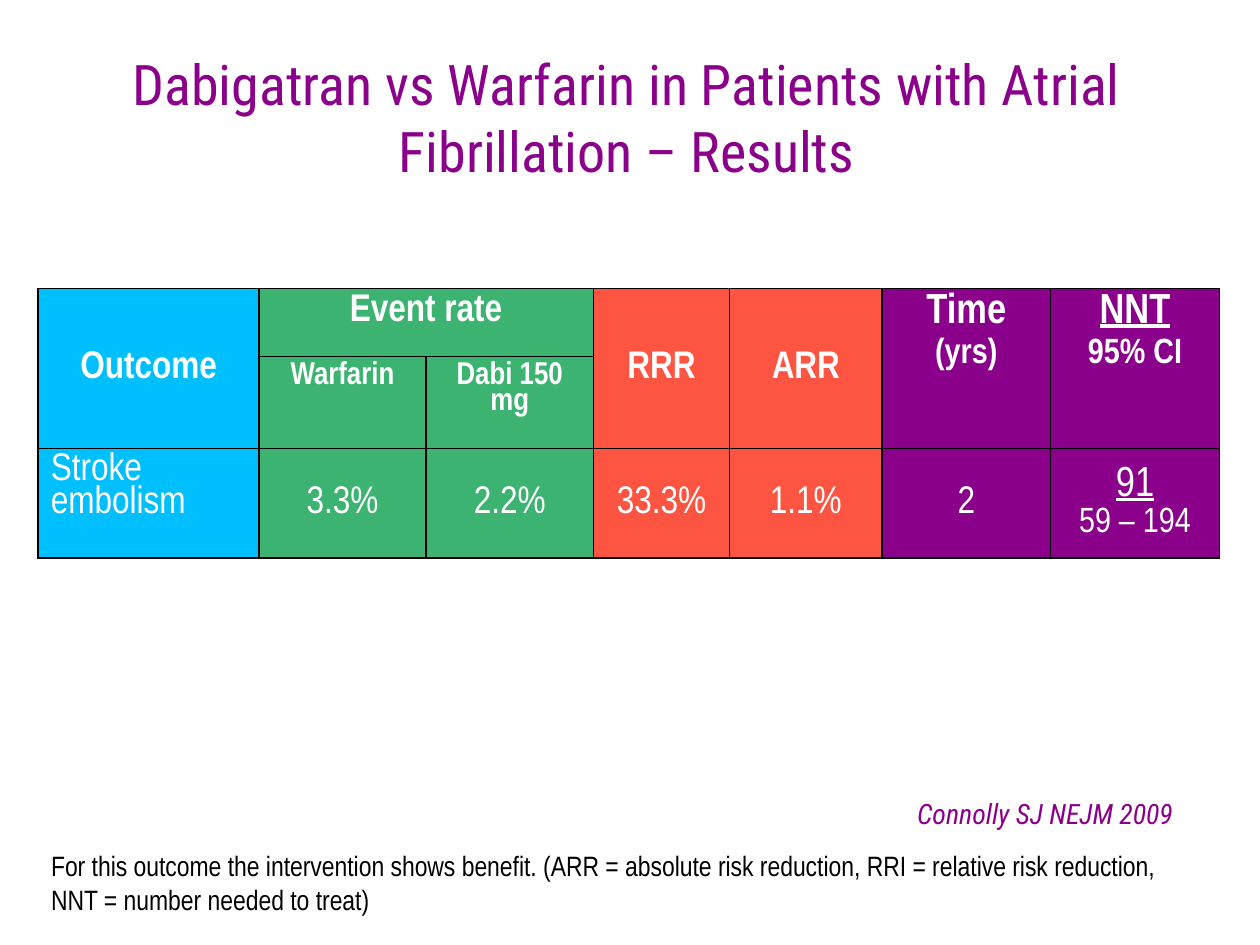
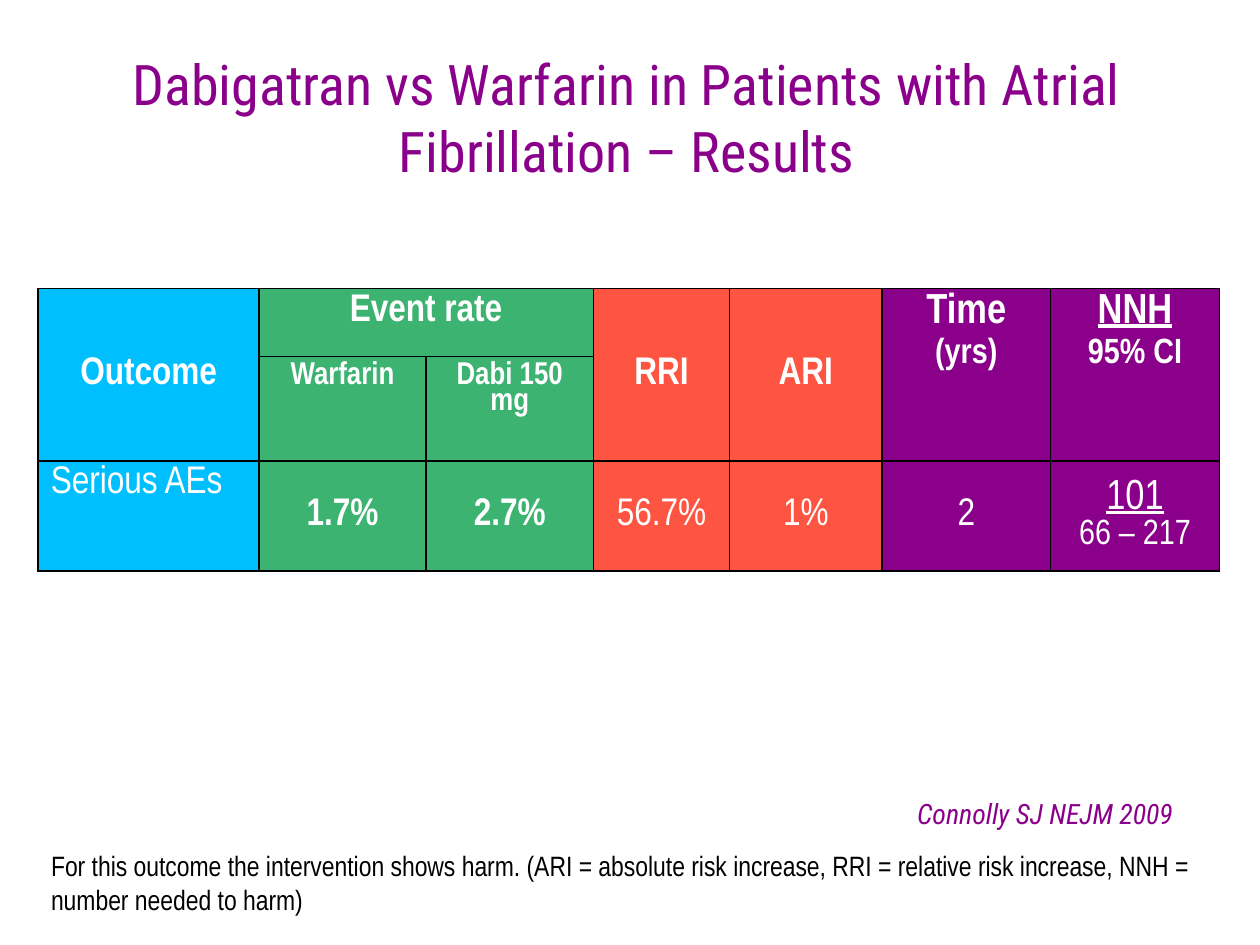
from lxml.etree import SubElement
from pptx import Presentation
from pptx.dml.color import RGBColor
from pptx.enum.text import MSO_ANCHOR as Anchor, MSO_AUTO_SIZE as AutoSize, PP_ALIGN as Align
from pptx.oxml import parse_xml
from pptx.oxml.ns import nsdecls, qn
from pptx.util import Cm, Pt

PURPLE, BLUE, GREEN, RED = "8B008B", "00BFFF", "3CB371", "FE5442"
WHITE, BLACK = "FFFFFF", "000000"
TITLE_FONT, BODY_FONT = "Roboto Condensed", "Arial Narrow"
COLUMN_FILLS = [BLUE, GREEN, GREEN, RED, RED, PURPLE, PURPLE]
COLUMN_WIDTHS = [4.45, 3.37, 3.37, 2.75, 3.07, 3.4, 3.4]
ROW_HEIGHTS = [1.37, 1.85, 2.21]
CELL_SPACING = 0.9
TITLE = "Dabigatran vs Warfarin in Patients with Atrial Fibrillation – Results"
CITATION = "Connolly SJ NEJM 2009"


def color(value):
    return RGBColor.from_string(value)


def write(para, text, size=22, font=BODY_FONT, fill=WHITE, bold=False, italic=False,
          underline=False, align=Align.CENTER, spacing=None, before=None, after=None):
    para.alignment = align
    para.line_spacing = spacing
    if before:
        para.space_before = Pt(before)
    if after:
        para.space_after = Pt(after)
    span = para.add_run()
    span.text = text
    span.font.name, span.font.size = font, Pt(size)
    span.font.bold, span.font.italic, span.font.underline = bold, italic, underline
    span.font.color.rgb = color(fill)


def add_borders(cell):
    properties = cell._tc.get_or_add_tcPr()
    for index, side in enumerate(["lnL", "lnR", "lnT", "lnB"]):
        line = parse_xml(f'<a:{side} {nsdecls("a")} w="{Pt(1)}"/>')
        fill = SubElement(line, qn("a:solidFill"))
        SubElement(fill, qn("a:srgbClr"), val=BLACK)
        properties.insert(index, line)


class ResultDeck:
    def __init__(self):
        self.deck = Presentation()
        self.deck.slide_width, self.deck.slide_height = Cm(25.4), Cm(19.05)
        self.page = None

    def add_page(self):
        self.page = self.deck.slides.add_slide(self.deck.slide_layouts[6])

    def add_text(self, text, left, top, width, height, anchor=Anchor.TOP, grow=False, **style):
        box = self.page.shapes.add_textbox(Cm(left), Cm(top), Cm(width), Cm(height))
        frame = box.text_frame
        frame.word_wrap = True
        frame.vertical_anchor = anchor
        frame.auto_size = AutoSize.SHAPE_TO_FIT_TEXT if grow else AutoSize.NONE
        write(frame.paragraphs[0], text, **style)

    def add_grid(self, left, top):
        frame = self.page.shapes.add_table(
            len(ROW_HEIGHTS), len(COLUMN_WIDTHS), Cm(left), Cm(top),
            Cm(sum(COLUMN_WIDTHS)), Cm(sum(ROW_HEIGHTS)))
        grid = frame.table
        grid.first_row = grid.horz_banding = False
        for column, width in zip(grid.columns, COLUMN_WIDTHS):
            column.width = Cm(width)
        for row, height in zip(grid.rows, ROW_HEIGHTS):
            row.height = Cm(height)
            for cell, fill in zip(row.cells, COLUMN_FILLS):
                cell.fill.solid()
                cell.fill.fore_color.rgb = color(fill)
                add_borders(cell)
        grid.cell(0, 1).merge(grid.cell(0, 2))
        for column in (0, 3, 4, 5, 6):
            grid.cell(0, column).merge(grid.cell(1, column))
        return grid

    def fill_cell(self, cell, text, anchor=Anchor.MIDDLE, **style):
        cell.vertical_anchor = anchor
        write(cell.text_frame.paragraphs[0], text, spacing=CELL_SPACING, **style)

    def fill_pair(self, cell, upper, lower, anchor, underline=True, bold=False, before=None, after=None):
        self.fill_cell(cell, upper, anchor, size=24, bold=bold, underline=underline, after=after)
        write(cell.text_frame.add_paragraph(), lower, size=20, bold=bold, spacing=CELL_SPACING,
              before=before, after=after)

    def add_results(self, relative, absolute, number, outcome, rates, changes, estimate, interval,
                    bold_rates):
        grid = self.add_grid(0.77, 5.82)
        for column, text in ((0, "Outcome"), (3, relative), (4, absolute)):
            self.fill_cell(grid.cell(0, column), text, bold=True)
        self.fill_cell(grid.cell(0, 1), "Event rate", Anchor.TOP, bold=True)
        for column, text in enumerate(["Warfarin", "Dabi 150 mg"], 1):
            self.fill_cell(grid.cell(1, column), text, Anchor.TOP, size=18, bold=True)
        self.fill_pair(grid.cell(0, 5), "Time", "(yrs)", Anchor.TOP, underline=False, bold=True, before=5)
        self.fill_pair(grid.cell(0, 6), number, "95% CI", Anchor.TOP, bold=True, before=5)
        self.fill_cell(grid.cell(2, 0), outcome, Anchor.TOP, align=Align.LEFT)
        for column, text in enumerate([*rates, *changes, "2"], 1):
            self.fill_cell(grid.cell(2, column), text, bold=bold_rates and column <= len(rates))
        self.fill_pair(grid.cell(2, 6), estimate, interval, Anchor.MIDDLE, after=2.5)

    def add_result_page(self, note, **results):
        self.add_page()
        self.add_text(TITLE, 0.78, 0.76, 23.72, 3.18, Anchor.MIDDLE,
                      size=32, font=TITLE_FONT, fill=PURPLE)
        self.add_results(**results)
        self.add_text(note, 0.78, 16.99, 23.72, 0.94, grow=True,
                      size=16, fill=BLACK, align=Align.LEFT)
        self.add_text(CITATION, 8.71, 15.93, 15.19, 0.94, grow=True,
                      size=16, font=TITLE_FONT, fill=PURPLE, italic=True, align=Align.RIGHT)


def main():
    results = ResultDeck()
    results.add_result_page(
        "For this outcome the intervention shows benefit. (ARR = absolute risk reduction, "
        "RRI = relative risk reduction, NNT = number needed to treat)",
        relative="RRR", absolute="ARR", number="NNT", outcome="Stroke embolism",
        rates=["3.3%", "2.2%"], changes=["33.3%", "1.1%"],
        estimate="91", interval="59 – 194", bold_rates=False)
    results.add_result_page(
        "For this outcome the intervention shows harm. (ARI = absolute risk increase, "
        "RRI = relative risk increase, NNH = number needed to harm)",
        relative="RRI", absolute="ARI", number="NNH", outcome="Serious AEs",
        rates=["1.7%", "2.7%"], changes=["56.7%", "1%"],
        estimate="101", interval="66 – 217", bold_rates=True)
    results.deck.save("out.pptx")


if __name__ == "__main__":
    main()
